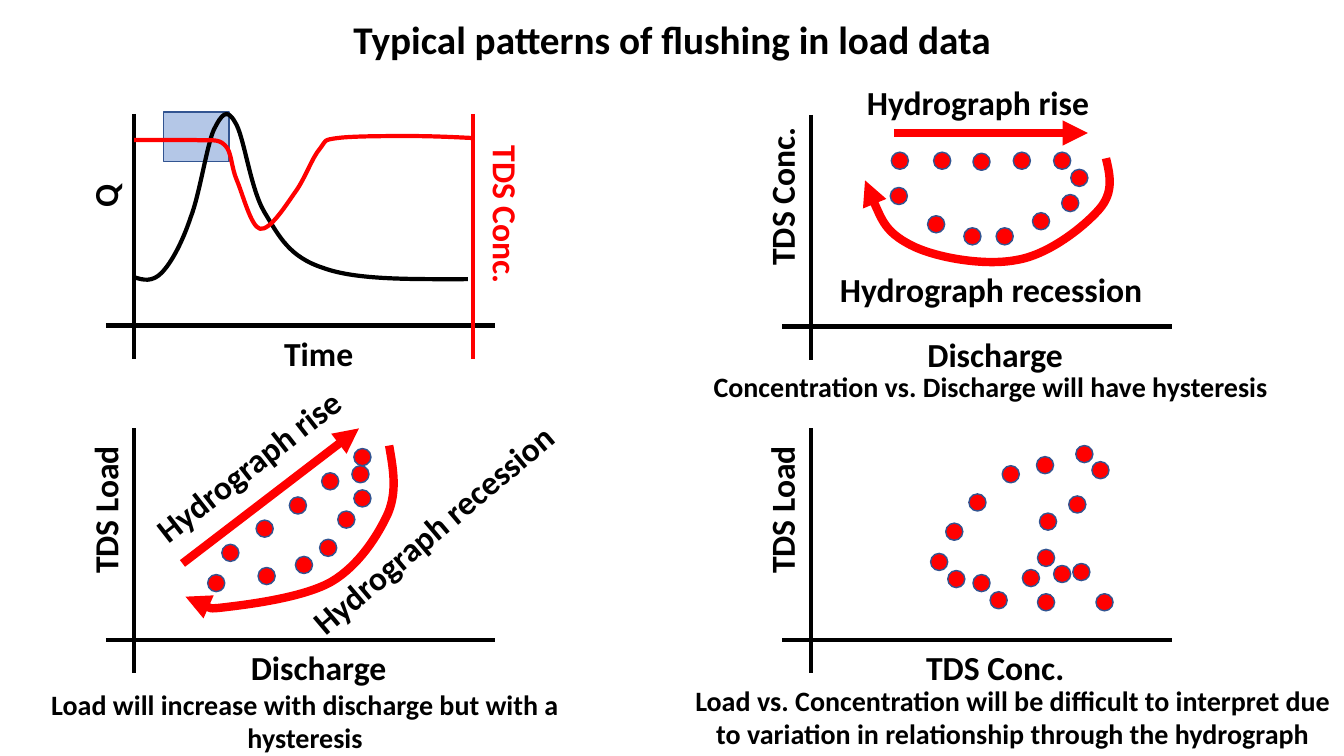
import pptx
import pptx.dml.color
import pptx.enum.shapes
import pptx.enum.text
import pptx.oxml
import pptx.oxml.ns
import pptx.util

BLACK = pptx.dml.color.RGBColor(0x00, 0x00, 0x00)
RED = pptx.dml.color.RGBColor(0xFF, 0x00, 0x00)
PALE_BLUE = pptx.dml.color.RGBColor(0xB4, 0xC7, 0xE7)
OUTLINE_BLUE = pptx.dml.color.RGBColor(0x32, 0x54, 0x91)
FONT = "Calibri"
THIN, THICK = 3, 6  # points

# Content: all coordinates below are in inches
TITLE = "Typical patterns of flushing in load data"

# Panels: left, top, (x label, width), (y label, width)
PANELS = [
    (1.05, 1.13, ("Time", 0.89), ("Q", 0.43)),
    (7.76, 1.14, ("Discharge", 1.56), ("TDS Conc.", 1.59)),
    (1.05, 4.25, ("Discharge", 1.56), ("TDS Load", 1.49)),
    (7.76, 4.25, ("TDS Conc.", 1.59), ("TDS Load", 1.49)),
]
AXIS_WIDTH, AXIS_HEIGHT = 3.86, 2.43
ORIGIN_X, ORIGIN_Y = 0.28, 2.1  # where the axes cross, from the panel corner

RISE_WINDOW = (1.62, 1.11, 0.65, 0.49)
SECOND_AXIS_X = 4.69
SECOND_AXIS_LABEL = ("TDS Conc.", 5.02, 2.13, 1.59, 90)

# Curves: start point, then two control points and an end point per segment
DISCHARGE_CURVE = [
    (1.33, 2.75), (1.42, 2.78), (1.51, 2.8), (1.6, 2.71),
    (1.7, 2.61), (1.81, 2.4), (1.89, 2.16), (1.98, 1.93), (2.05, 1.45), (2.12, 1.29),
    (2.2, 1.13), (2.25, 1.07), (2.33, 1.21), (2.42, 1.34), (2.48, 1.86), (2.62, 2.1),
    (2.77, 2.35), (2.87, 2.55), (3.21, 2.66), (3.54, 2.78), (4.09, 2.77), (4.64, 2.77),
]
CONCENTRATION_CURVE = [
    (1.33, 1.39), (1.56, 1.39), (1.79, 1.39), (1.94, 1.39),
    (2.09, 1.4), (2.16, 1.37), (2.23, 1.44), (2.3, 1.5), (2.29, 1.65), (2.35, 1.79),
    (2.41, 1.93), (2.49, 2.25), (2.58, 2.27), (2.68, 2.29), (2.84, 2.03), (2.94, 1.89),
    (3.03, 1.76), (3.1, 1.56), (3.17, 1.48), (3.24, 1.39), (3.2, 1.39), (3.35, 1.37),
    (3.5, 1.35), (3.84, 1.35), (4.06, 1.35), (4.28, 1.35), (4.49, 1.36), (4.69, 1.37),
]
RECESSION_CURVES = [
    [(10.97, 1.57), (11.01, 1.74), (11.05, 1.91), (10.9, 2.08),
     (10.75, 2.25), (10.4, 2.53), (10.08, 2.58), (9.77, 2.64), (9.28, 2.56), (9.03, 2.43),
     (8.78, 2.3), (8.68, 2.05), (8.58, 1.79)],
    [(3.86, 4.42), (3.9, 4.65), (3.94, 4.87), (3.85, 5.09),
     (3.75, 5.31), (3.56, 5.61), (3.29, 5.77), (3.03, 5.92), (2.52, 5.99), (2.27, 6.02),
     (2.03, 6.05), (1.93, 5.98), (1.84, 5.92)],
]
RISE_ARROWS = [((8.87, 1.32), (10.79, 1.32)), ((1.81, 5.59), (3.56, 4.25))]

# Annotations: text, centre x, centre y, width, rotation
ANNOTATIONS = [
    ("Hydrograph rise", 9.7, 1.01, 2.43, 0),
    ("Hydrograph recession", 9.83, 2.87, 3.31, 0),
    ("Hydrograph rise", 2.46, 4.62, 2.43, 322.1),
    ("Hydrograph recession", 4.29, 5.25, 3.31, 319.8),
]

# Captions: text, left, top, width, height
CAPTIONS = [
    ("Concentration vs. Discharge will have hysteresis", 6.82, 3.62, 6.01, 0.44),
    ("Load will increase with discharge but with a hysteresis", 0.02, 6.77, 6.01, 0.77),
    ("Load vs. Concentration will be difficult to interpret due to variation "
     "in relationship through the hydrograph", 6.78, 6.73, 6.53, 0.77),
]

# Sample points: left and top of each dot
DOT_SIZE = 0.17
CONCENTRATION_DOTS = [
    (8.84, 1.51), (9.26, 1.51), (9.65, 1.52), (10.05, 1.51), (10.45, 1.51), (10.62, 1.68),
    (10.53, 1.93), (10.24, 2.11), (9.88, 2.26), (9.56, 2.26), (9.2, 2.14), (8.83, 1.86),
]
LOAD_DOTS = [
    (2.2, 5.4), (2.54, 5.16), (2.87, 4.93), (3.19, 4.69), (3.51, 4.45), (3.49, 4.62),
    (3.51, 4.86), (3.35, 5.07), (3.17, 5.35), (2.93, 5.52), (2.56, 5.63), (2.06, 5.7),
]
SCATTERED_DOTS = [
    (10.67, 4.42), (10.28, 4.53), (9.94, 4.62), (9.61, 4.9), (9.65, 5.7), (9.38, 5.19),
    (9.23, 5.49), (10.83, 4.58), (10.6, 4.92), (10.31, 5.09), (10.29, 5.45), (9.82, 5.87),
    (10.14, 5.65), (9.4, 5.66), (10.64, 5.59), (10.45, 5.61), (10.87, 5.89), (10.29, 5.89),
]


def length(inches):
    return pptx.util.Cm(inches * 2.54)


def lengths(*values):
    return [length(value) for value in values]


def write(frame, text, size, color=BLACK, wrap=True):
    frame.text = text
    frame.word_wrap = wrap
    paragraph = frame.paragraphs[0]
    paragraph.alignment = pptx.enum.text.PP_ALIGN.CENTER
    font = paragraph.runs[0].font
    font.name, font.size, font.bold = FONT, pptx.util.Pt(size), True
    font.color.rgb = color


def add_label(slide, text, center_x, center_y, width, rotation=0, color=BLACK):
    height = 0.5
    label = slide.shapes.add_textbox(
        *lengths(center_x - width / 2, center_y - height / 2, width, height))
    label.rotation = rotation
    write(label.text_frame, text, 24, color, wrap=False)


def add_marker(slide, kind, box, fill):
    marker = slide.shapes.add_shape(kind, *lengths(*box))
    marker.shadow.inherit = False
    marker.fill.solid()
    marker.fill.fore_color.rgb = fill
    marker.line.color.rgb = OUTLINE_BLUE
    marker.line.width = pptx.util.Pt(1)


def stroke(shape, color, width, arrow):
    shape.line.color.rgb = color
    shape.line.width = pptx.util.Pt(width)
    if arrow:
        outline = shape.element.spPr.find(pptx.oxml.ns.qn("a:ln"))
        head = pptx.oxml.parse_xml(
            f'<a:tailEnd {pptx.oxml.ns.nsdecls("a")} type="triangle"/>')
        outline.append(head)


def add_line(slide, start, end, color=BLACK, width=THIN, arrow=False):
    line = slide.shapes.add_connector(
        pptx.enum.shapes.MSO_CONNECTOR.STRAIGHT, *lengths(*start, *end))
    stroke(line, color, width, arrow)
    line.element.spPr.append(
        pptx.oxml.parse_xml(f'<a:effectLst {pptx.oxml.ns.nsdecls("a")}/>'))


def add_curve(slide, points, color, width=THIN, arrow=False):
    units = [(x * 100, y * 100) for x, y in points]
    builder = slide.shapes.build_freeform(*units[0], scale=length(0.01))
    builder.add_line_segments(units[1:], close=False)
    curve = builder.convert_to_shape()
    # Turn every three straight segments into one Bézier segment
    segments = list(curve.element.iter(pptx.oxml.ns.qn("a:lnTo")))
    for first in range(0, len(segments), 3):
        bezier = pptx.oxml.parse_xml(f'<a:cubicBezTo {pptx.oxml.ns.nsdecls("a")}/>')
        segments[first].addprevious(bezier)
        for segment in segments[first:first + 3]:
            bezier.append(segment[0])
            segment.getparent().remove(segment)
    curve.shadow.inherit = False
    curve.fill.background()
    stroke(curve, color, width, arrow)


def main():
    deck = pptx.Presentation()
    deck.slide_width, deck.slide_height = lengths(13.33, 7.5)
    slide = deck.slides.add_slide(deck.slide_layouts[5])

    # Title
    title = slide.shapes.title
    title.left, title.top, title.width, title.height = lengths(0, 0.1, 13.33, 0.57)
    write(title.text_frame, TITLE, 28)

    # Axes and their labels
    add_marker(slide, pptx.enum.shapes.MSO_SHAPE.RECTANGLE, RISE_WINDOW, PALE_BLUE)
    for left, top, (x_label, x_width), (y_label, y_width) in PANELS:
        axis_x, axis_y = left + ORIGIN_X, top + ORIGIN_Y
        add_line(slide, (axis_x, top), (axis_x, top + AXIS_HEIGHT))
        add_line(slide, (left, axis_y), (left + AXIS_WIDTH, axis_y))
        add_label(slide, x_label, left + 2.11, top + 2.37, x_width)
        add_label(slide, y_label, left - 0.01, top + 0.81, y_width, 270)
    top = PANELS[0][1]
    add_line(slide, (SECOND_AXIS_X, top), (SECOND_AXIS_X, top + AXIS_HEIGHT), RED)
    add_label(slide, *SECOND_AXIS_LABEL, color=RED)

    # Time series
    add_curve(slide, DISCHARGE_CURVE, BLACK)
    add_curve(slide, CONCENTRATION_CURVE, RED)

    # Sample points
    for left, top in CONCENTRATION_DOTS + LOAD_DOTS + SCATTERED_DOTS:
        add_marker(slide, pptx.enum.shapes.MSO_SHAPE.OVAL,
                   (left, top, DOT_SIZE, DOT_SIZE), RED)

    # Rise and recession arrows
    for start, end in RISE_ARROWS:
        add_line(slide, start, end, RED, THICK, arrow=True)
    for points in RECESSION_CURVES:
        add_curve(slide, points, RED, THICK, arrow=True)
    for annotation in ANNOTATIONS:
        add_label(slide, *annotation)

    # Captions
    for text, *box in CAPTIONS:
        caption = slide.shapes.add_textbox(*lengths(*box))
        write(caption.text_frame, text, 20)

    deck.save("out.pptx")


if __name__ == "__main__":
    main()
